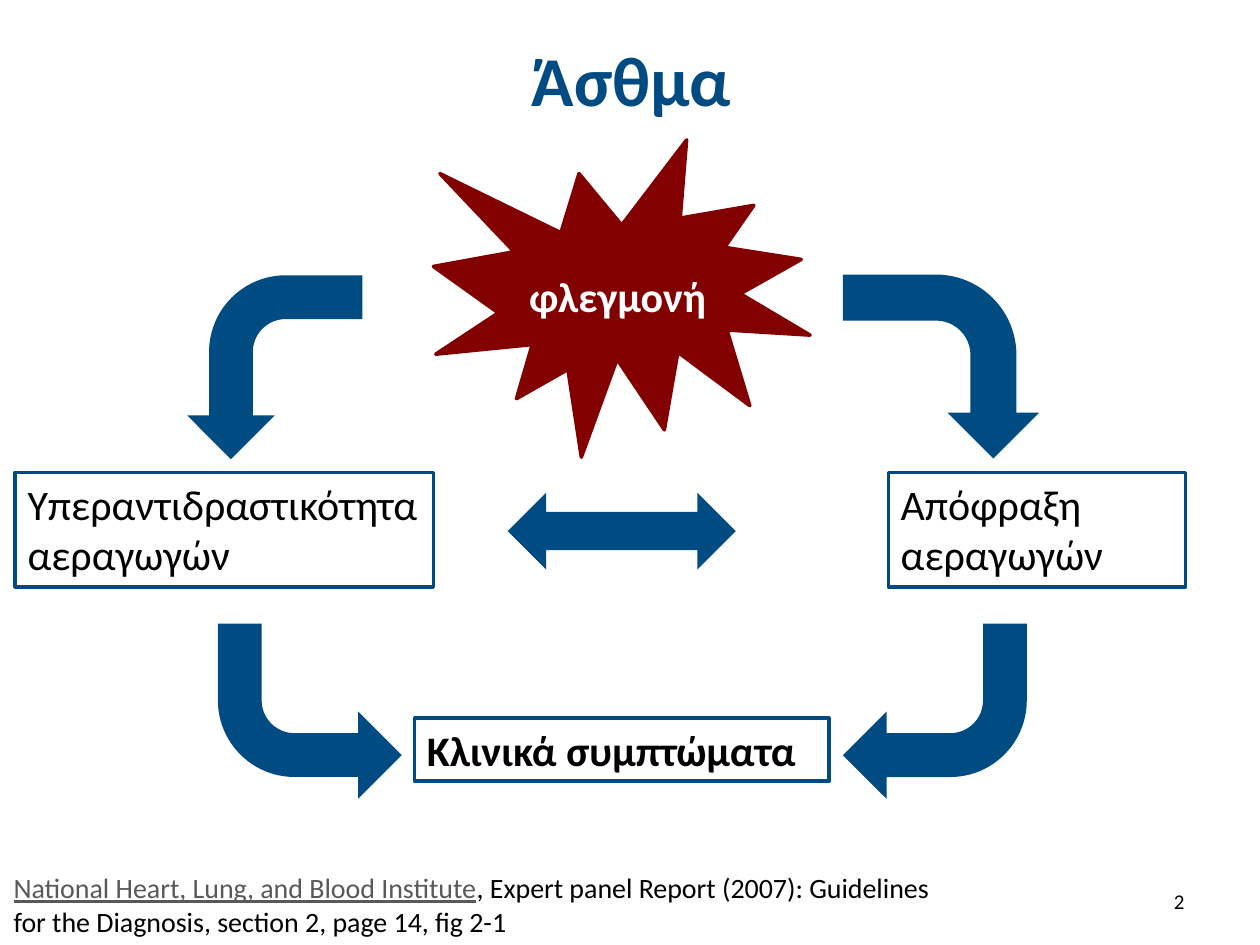
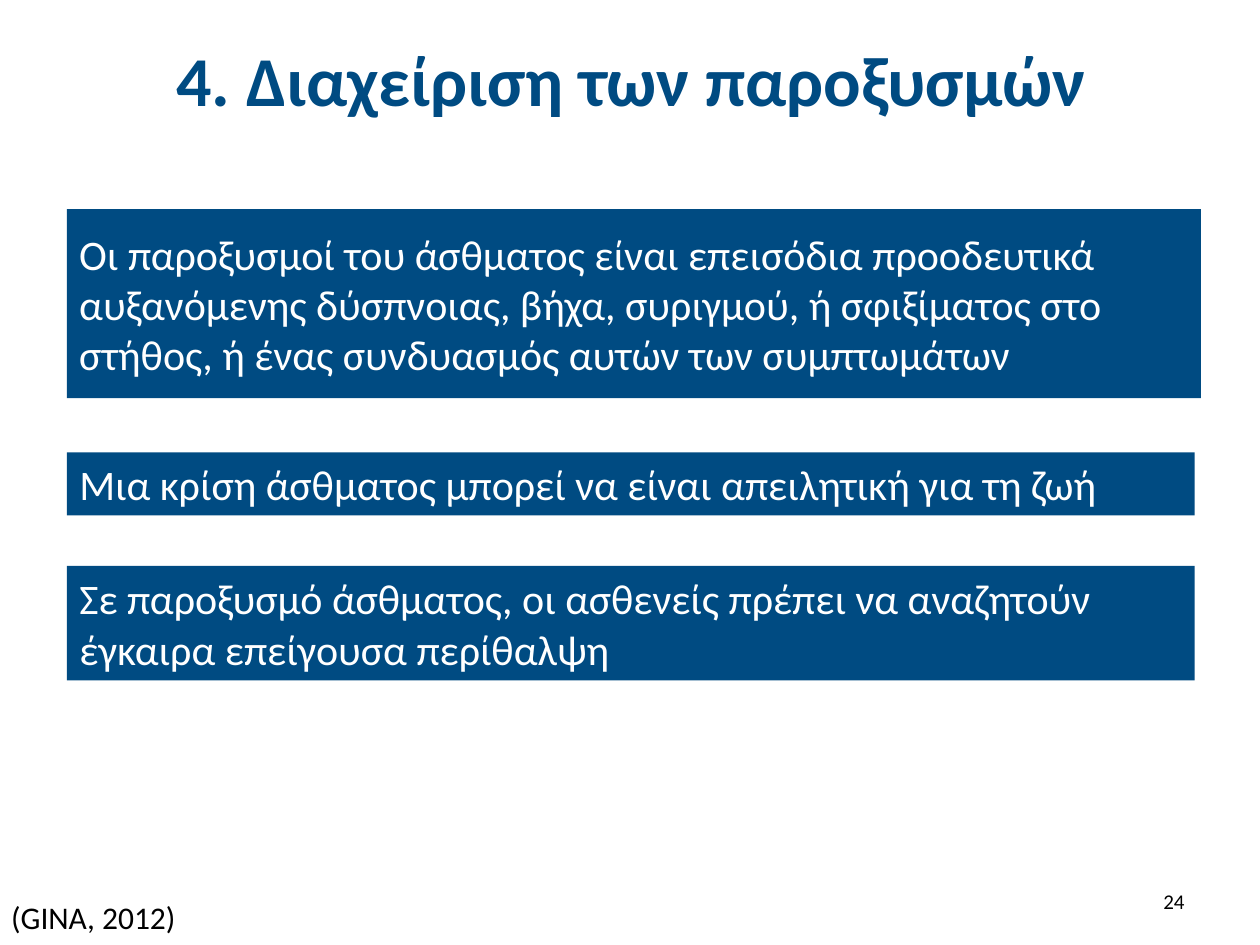
from pptx import Presentation
from pptx.dml.color import RGBColor
from pptx.enum import shapes, text
from pptx.util import Pt

BLUE = RGBColor(0x00, 0x4B, 0x82)
DARK_RED = RGBColor(0x82, 0x00, 0x00)
GREY = RGBColor(0x59, 0x59, 0x59)
BLACK = RGBColor(0x00, 0x00, 0x00)
WHITE = RGBColor(0xFF, 0xFF, 0xFF)
FONT = "Calibri"
KIND = shapes.MSO_SHAPE
ALIGN = text.PP_ALIGN
MIDDLE = text.MSO_ANCHOR.MIDDLE
TOP = text.MSO_ANCHOR.TOP


def points(box):
    return [Pt(v) for v in box]


def inside(origin, box):
    return (origin[0] + box[0], origin[1] + box[1], box[2], box[3])


def add_run(p, words, size, color, bold=False, underline=False):
    r = p.add_run()
    r.text = words
    r.font.name = FONT
    r.font.size = Pt(size)
    r.font.color.rgb = color
    r.font.bold = bold
    r.font.underline = underline


def set_text(sp, words, size=24, color=BLACK, bold=False, align=ALIGN.LEFT, anchor=TOP):
    tf = sp.text_frame
    tf.word_wrap = True
    tf.vertical_anchor = anchor
    p = tf.paragraphs[0]
    p.alignment = align
    add_run(p, words, size, color, bold)
    return p


def add_label(s, box, words, **style):
    return set_text(s.shapes.add_textbox(*points(box)), words, **style)


def add_solid(s, kind, box, fill=None, line=None):
    sp = s.shapes.add_shape(kind, *points(box))
    sp.shadow.inherit = False
    if fill is None:
        sp.fill.background()
    else:
        sp.fill.solid()
        sp.fill.fore_color.rgb = fill
    if line is None:
        sp.line.fill.background()
    else:
        sp.line.color.rgb = line
        sp.line.width = Pt(2)
    return sp


def add_bent_arrow(s, box, rotation=0, flip=False):
    sp = add_solid(s, KIND.BENT_ARROW, box, BLUE)
    sp.rotation = rotation
    if flip:
        sp._element.spPr.get_or_add_xfrm().set("flipV", "1")


def add_base(prs, title, number):
    s = prs.slides.add_slide(prs.slide_layouts[6])
    add_label(s, (36.7, 9.4, 648, 71.3), title, size=40, color=BLUE, bold=True,
              align=ALIGN.CENTER, anchor=MIDDLE)
    add_label(s, (516.2, 500.4, 167.8, 28.8), str(number), size=12,
              align=ALIGN.RIGHT, anchor=MIDDLE)
    return s


def add_asthma_cycle(s, box):
    add_solid(s, KIND.EXPLOSION1, inside(box, (239, 0, 215.3, 181.4)), DARK_RED, DARK_RED)
    add_label(s, inside(box, (286.6, 71.3, 120.2, 39.6)), "φλεγμονή", color=WHITE, bold=True)

    for place, fill, words, bold in (
        ((0, 190, 239, 65.5), WHITE, "Υπεραντιδραστικότητα αεραγωγών", False),
        ((499, 190, 169.9, 65.5), WHITE, "Απόφραξη αεραγωγών", False),
        ((228.2, 330.5, 236.9, 36), None, "Κλινικά συμπτώματα", True),
    ):
        set_text(add_solid(s, KIND.RECTANGLE, inside(box, place), fill, BLUE), words, bold=bold)

    add_solid(s, KIND.LEFT_RIGHT_ARROW, inside(box, (281.5, 201.6, 130.3, 43.9)), BLUE)
    for place, rotation, flip in (
        ((476.6, 73.4, 105.1, 112.3), 90, False),
        ((95.8, 79.9, 105.1, 100.1), 90, True),
        ((115.9, 276.5, 105.1, 100.1), 0, True),
        ((473, 276.5, 105.1, 100.1), 180, False),
    ):
        add_bent_arrow(s, inside(box, place), rotation, flip)


def add_bands(s, box, bands):
    for top, width, height, words in bands:
        sp = add_solid(s, KIND.RECTANGLE, inside(box, (0, top, width, height)), BLUE)
        set_text(sp, words, color=WHITE, anchor=MIDDLE)


def build_asthma(prs):
    s = add_base(prs, "Άσθμα", 2)
    add_asthma_cycle(s, (8.64, 79.92, 668.9, 376.6))
    p = add_label(s, (0.7, 493.9, 544.3, 46.1), "National Heart, Lung, and Blood Institute",
                  size=16, color=GREY)
    p.runs[0].font.underline = True
    add_run(p, ", Expert panel Report (2007): Guidelines for the Diagnosis, "
               "section 2, page 14, fig 2-1", 16, BLACK)


def build_exacerbations(prs):
    s = add_base(prs, "4. Διαχείριση των παροξυσμών", 24)
    add_bands(s, (38.2, 119.5, 648, 269.3), (
        (0, 648, 108, "Οι παροξυσμοί του άσθματος είναι επεισόδια προοδευτικά αυξανόμενης "
                      "δύσπνοιας, βήχα, συριγμού, ή σφιξίματος στο στήθος, ή ένας "
                      "συνδυασμός αυτών των συμπτωμάτων"),
        (139, 644.4, 36, "Μια κρίση άσθματος μπορεί να είναι απειλητική για τη ζωή"),
        (203.8, 644.4, 65.5, "Σε παροξυσμό άσθματος, οι ασθενείς πρέπει να αναζητούν "
                             "έγκαιρα επείγουσα περίθαλψη"),
    ))
    add_label(s, (-0.7, 509.8, 109.4, 28.8), "(GINA, 2012)", size=18)


def main():
    prs = Presentation()
    prs.slide_width, prs.slide_height = Pt(720), Pt(540)
    build_asthma(prs)
    build_exacerbations(prs)
    prs.save("out.pptx")


if __name__ == "__main__":
    main()
